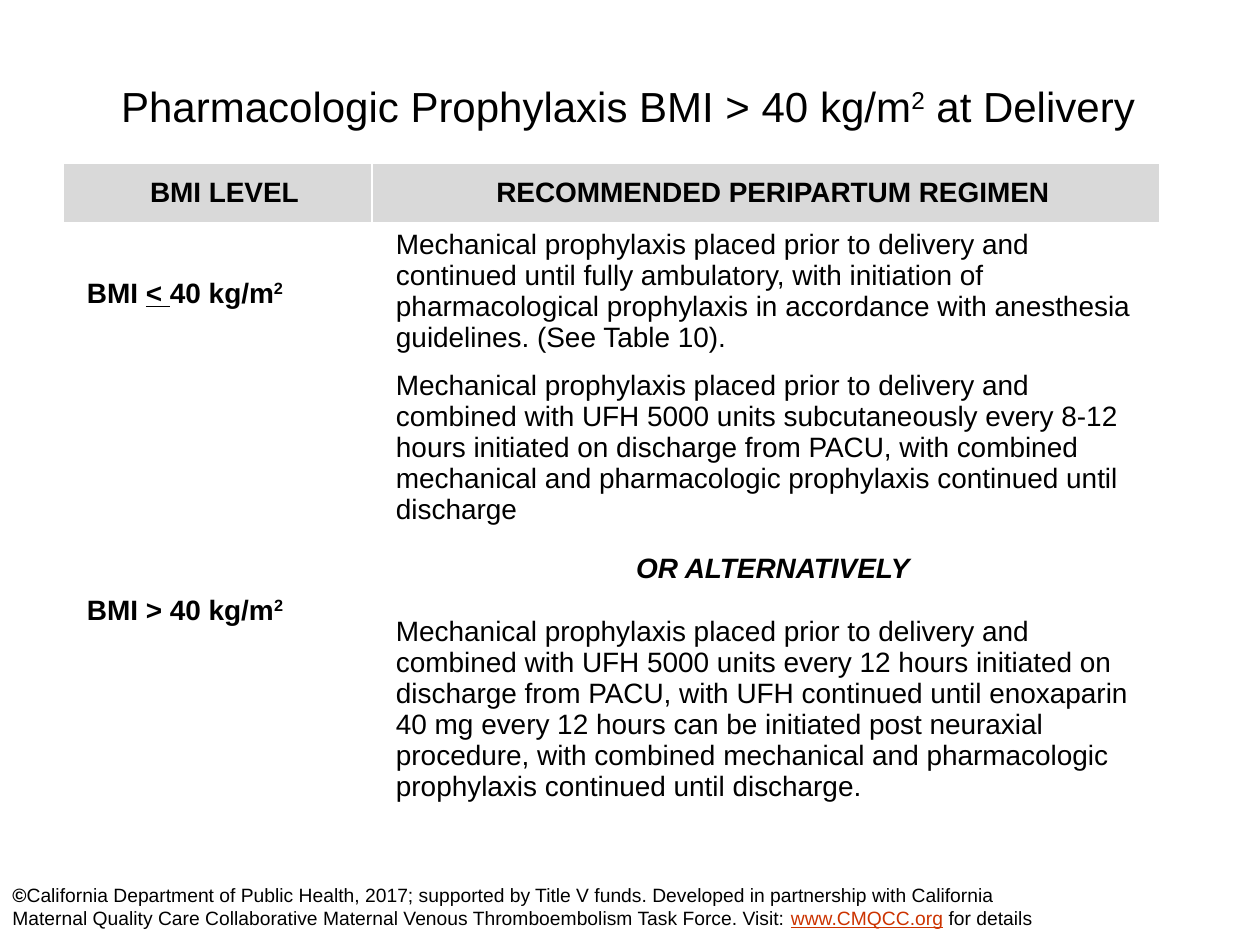
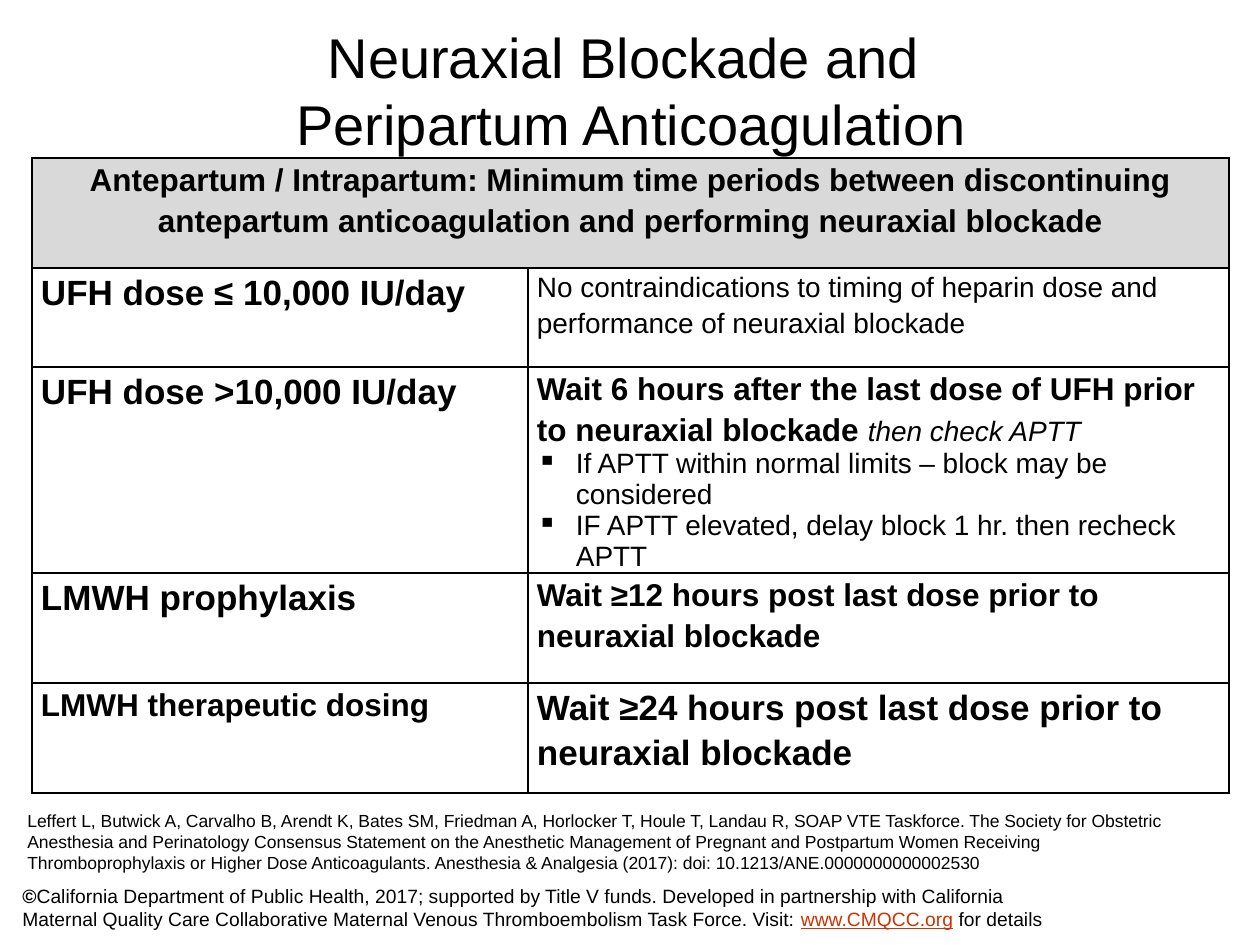
import pptx
import pptx.dml.color
import pptx.enum.text
import pptx.oxml.ns
import pptx.util
from lxml import etree

PX = 914400 / 126  # EMU in one px
FONT = "Arial"
BLACK = pptx.dml.color.RGBColor(0x00, 0x00, 0x00)
WHITE = pptx.dml.color.RGBColor(0xFF, 0xFF, 0xFF)
GREY = pptx.dml.color.RGBColor(0xD9, 0xD9, 0xD9)
LINK = pptx.dml.color.RGBColor(0xCC, 0x33, 0x00)

ALIGN = pptx.enum.text.PP_ALIGN
ANCHOR = pptx.enum.text.MSO_ANCHOR

COPYRIGHT = [
    ("©", {"bold": True}),
    ("California Department of Public Health, 2017; supported by Title V funds. "
     "Developed in partnership with California Maternal Quality Care Collaborative "
     "Maternal Venous Thromboembolism Task Force. Visit: ", {}),
    ("www.CMQCC.org", {"color": LINK, "underline": True}),
    (" for details", {}),
]


def px(length):
    return pptx.util.Emu(round(length * PX))


def write(paragraph, text, size=16, bold=False, italic=False, underline=False,
          raised=False, color=BLACK):
    """Add text to a paragraph; a newline becomes a line break."""
    for number, line in enumerate(text.split("\n")):
        if number:
            paragraph.add_line_break()
        run = paragraph.add_run()
        run.text = line
        font = run.font
        font.name, font.size, font.color.rgb = FONT, pptx.util.Pt(size), color
        font.bold, font.italic, font.underline = bold, italic, underline
        if raised:
            run._r.get_or_add_rPr().set("baseline", "30000")


def para(*runs, **layout):
    """Describe a paragraph: (text, format) runs and its layout."""
    return runs, layout


class Deck:
    def __init__(self):
        self.presentation = pptx.Presentation()
        self.presentation.slide_width = px(1260)
        self.presentation.slide_height = px(945)
        self.slide = None

    def new_slide(self):
        layout = self.presentation.slide_layouts[5]
        self.slide = self.presentation.slides.add_slide(layout)

    def title(self, box, runs, size):
        heading = self.slide.shapes.title
        heading.left, heading.top, heading.width, heading.height = map(px, box)
        frame = heading.text_frame
        frame.word_wrap = True
        frame.auto_size = pptx.enum.text.MSO_AUTO_SIZE.NONE
        frame.vertical_anchor = ANCHOR.MIDDLE
        self.fill_frame(frame, [para(*runs, align=ALIGN.CENTER)], size)

    def text(self, box, runs, size):
        frame = self.slide.shapes.add_textbox(*map(px, box)).text_frame
        frame.word_wrap = True
        self.fill_frame(frame, [para(*runs)], size)

    def copyright(self, left, top):
        self.text((left, top, 1061, 59), COPYRIGHT, 11)

    def fill_frame(self, frame, paragraphs, size=16):
        for number, (runs, layout) in enumerate(paragraphs):
            paragraph = frame.add_paragraph() if number else frame.paragraphs[0]
            self.lay_out(paragraph, **layout)
            for text, style in runs:
                write(paragraph, text, **{"size": size, **style})

    def lay_out(self, paragraph, align=ALIGN.LEFT, spacing=None, before=0,
                after=0, indent=0, bullet=None):
        properties = paragraph._p.get_or_add_pPr()
        properties.set("marL", str(px(indent)))
        properties.set("indent", str(px(-indent if bullet else 0)))
        if bullet:
            tag = pptx.oxml.ns.qn("a:buChar")
            etree.SubElement(properties, tag).set("char", bullet)
        paragraph.alignment = align
        paragraph.space_before = pptx.util.Pt(before)
        paragraph.space_after = pptx.util.Pt(after)
        if spacing:
            paragraph.line_spacing = spacing

    def table(self, left, top, widths, heights, margins, border):
        frame = self.slide.shapes.add_table(
            len(heights), len(widths), px(left), px(top),
            px(sum(widths)), px(sum(heights)))
        table = frame.table
        table.first_row = table.horz_banding = False
        for column, width in zip(table.columns, widths):
            column.width = px(width)
        for row, height in zip(table.rows, heights):
            row.height = px(height)
        side, edge = map(px, margins)
        for cell in table.iter_cells():
            cell.margin_left = cell.margin_right = side
            cell.margin_top = cell.margin_bottom = edge
            self.outline(cell, border)
            cell.fill.solid()
            cell.fill.fore_color.rgb = WHITE
        for cell in table.rows[0].cells:
            cell.fill.fore_color.rgb = GREY
        return table

    def outline(self, cell, color):
        qn = pptx.oxml.ns.qn
        properties = cell._tc.get_or_add_tcPr()
        for side in ("a:lnL", "a:lnR", "a:lnT", "a:lnB"):
            line = etree.SubElement(properties, qn(side), w="12700")
            solid = etree.SubElement(line, qn("a:solidFill"))
            etree.SubElement(solid, qn("a:srgbClr"), val=str(color))


def pharmacologic_slide(deck):
    deck.new_slide()
    deck.title((95, 58, 1066, 95), [
        ("Pharmacologic Prophylaxis BMI > 40 kg/m", {}),
        ("2", {"raised": True}),
        (" at Delivery", {})], 24)

    strong = {"bold": True}
    square = ("2", {"bold": True, "raised": True})
    centred = {"align": ALIGN.CENTER, "indent": 14}
    regimens = [
        [[para(("BMI LEVEL", strong), **centred)],
         [para(("RECOMMENDED PERIPARTUM REGIMEN", strong), **centred)]],
        [[para(("BMI ", strong), ("< ", {"bold": True, "underline": True}),
               ("40 kg/m", strong), square, indent=14)],
         [para(("Mechanical prophylaxis placed prior to delivery and continued until "
                "fully ambulatory, with initiation of pharmacological prophylaxis in "
                "accordance with anesthesia guidelines. (See Table 10).", {}),
               indent=14)]],
        [[para(("BMI > 40 kg/m", strong), square, indent=14)],
         [para(("Mechanical prophylaxis placed prior to delivery and combined with "
                "UFH 5000 units subcutaneously every 8-12 hours initiated on discharge "
                "from PACU, with combined mechanical and pharmacologic prophylaxis "
                "continued until discharge", {}), indent=14),
          para(("OR ALTERNATIVELY", {"bold": True, "italic": True}),
               before=16, after=18, **centred),
          para(("Mechanical prophylaxis placed prior to delivery and combined with "
                "UFH 5000 units every 12 hours initiated on discharge from PACU, with "
                "UFH continued until enoxaparin 40 mg every 12 hours can be initiated "
                "post neuraxial procedure, with combined mechanical and pharmacologic "
                "prophylaxis continued until discharge.", {}), indent=14)]],
    ]
    table = deck.table(63, 163, (309, 788), (60, 141, 493), (10, 6), WHITE)
    for r, row in enumerate(regimens):
        for c, paragraphs in enumerate(row):
            cell = table.cell(r, c)
            deck.fill_frame(cell.text_frame, paragraphs)
            if r == 0 or c == 0:
                cell.vertical_anchor = ANCHOR.MIDDLE
    deck.copyright(0, 877)


def neuraxial_slide(deck):
    deck.new_slide()
    deck.title((66, 42, 1131, 95),
               [("Neuraxial Blockade and \nPeripartum Anticoagulation", {})], 32)

    def entry(text, size, bold=True, align=ALIGN.LEFT):
        return [para((text, {"size": size, "bold": bold}),
                     align=align, spacing=1.15, after=10)]

    bullets = ("If APTT within normal limits – block may be considered",
               "IF APTT elevated, delay block 1 hr. then recheck APTT")
    wait_then_check = [
        para(("Wait 6 hours after the last dose of UFH prior to neuraxial blockade ",
              {"size": 18, "bold": True}),
             ("then check APTT", {"italic": True}), spacing=1.15),
        *(para((text, {}), indent=39, bullet="▪") for text in bullets)]
    timings = [
        (entry("UFH dose ≤ 10,000 IU/day", 20),
         entry("No contraindications to timing of heparin dose and performance of "
               "neuraxial blockade", 16, bold=False)),
        (entry("UFH dose >10,000 IU/day", 20), wait_then_check),
        (entry("LMWH prophylaxis", 20),
         entry("Wait ≥12 hours post last dose prior to neuraxial blockade", 18)),
        (entry("LMWH therapeutic dosing", 18),
         entry("Wait ≥24 hours post last dose prior to neuraxial blockade", 20)),
    ]
    table = deck.table(32, 158, (496, 701), (110, 99, 206, 110, 110), (9, 0), BLACK)
    heading = table.cell(0, 0)
    heading.merge(table.cell(0, 1))
    deck.fill_frame(heading.text_frame, entry(
        "Antepartum / Intrapartum: Minimum time periods between discontinuing "
        "antepartum anticoagulation and performing neuraxial blockade",
        18, align=ALIGN.CENTER))
    for r, row in enumerate(timings, start=1):
        for c, paragraphs in enumerate(row):
            deck.fill_frame(table.cell(r, c).text_frame, paragraphs)

    # Source and copyright
    deck.text((15, 804, 1187, 77), [
        ("Leffert L, Butwick A, Carvalho B, Arendt K, Bates SM, Friedman A, Horlocker T, "
         "Houle T, Landau R, SOAP VTE Taskforce. The Society for Obstetric Anesthesia "
         "and Perinatology Consensus Statement on the Anesthetic Management of Pregnant "
         "and Postpartum Women Receiving Thromboprophylaxis or Higher Dose "
         "Anticoagulants. Anesthesia & Analgesia (2017): doi: "
         "10.1213/ANE.0000000000002530", {})], 10)
    deck.copyright(10, 878)


def main():
    deck = Deck()
    pharmacologic_slide(deck)
    neuraxial_slide(deck)
    deck.presentation.save("out.pptx")


if __name__ == "__main__":
    main()
